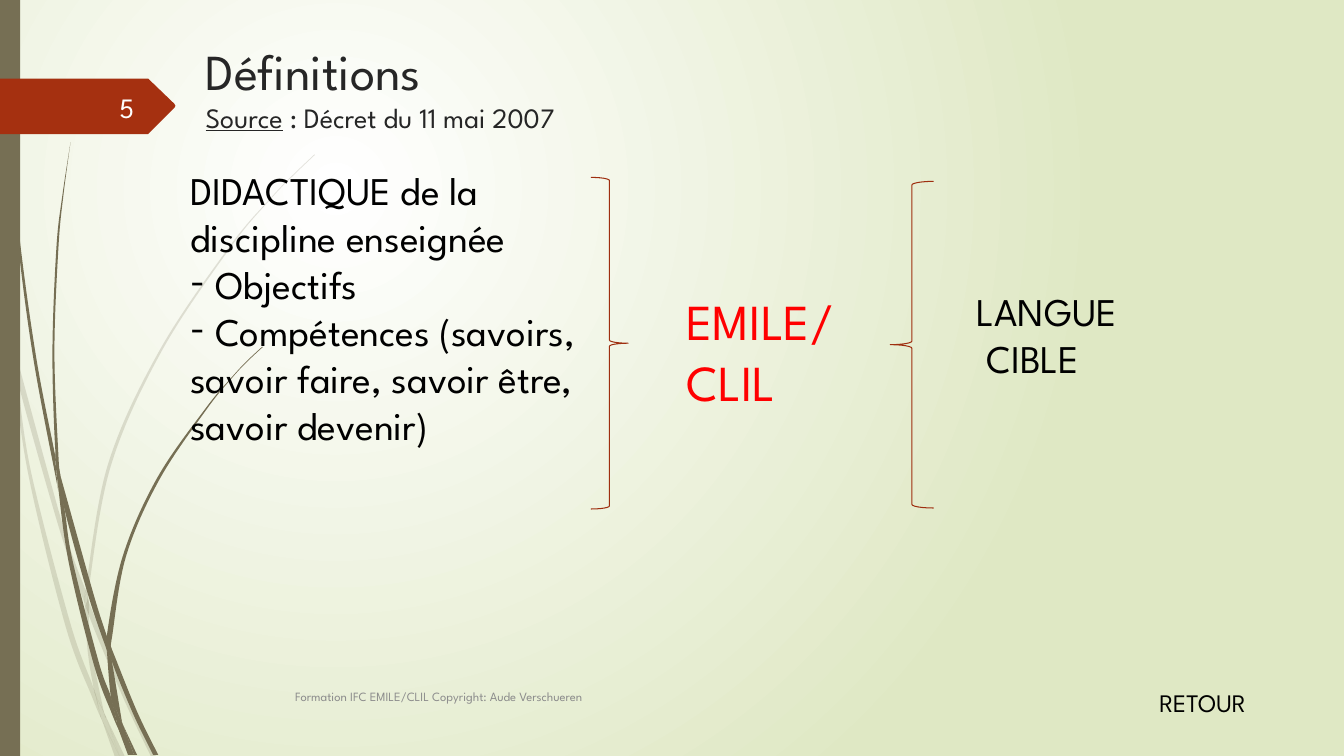
from lxml import etree
from pptx import Presentation
from pptx import util as u
from pptx.dml.color import RGBColor
from pptx.enum import shapes, text
from pptx.oxml.ns import qn

PX = 9144  # 100 px to the inch
FONT = "League Spartan"
WHITE = RGBColor(0xFF, 0xFF, 0xFF)
PALE_GREEN = RGBColor(0xDF, 0xE8, 0xC4)
OLIVE = RGBColor(0x76, 0x6F, 0x54)
RUST = RGBColor(0xA5, 0x30, 0x10)
DARK_RUST = RGBColor(0x9E, 0x2E, 0x0F)
CHARCOAL = RGBColor(0x26, 0x26, 0x26)
BLACK = RGBColor(0, 0, 0)
RED = RGBColor(0xFF, 0, 0)
GRAY = RGBColor(0x8C, 0x8C, 0x8C)
OFF_WHITE = RGBColor(0xFE, 0xFF, 0xFF)

# Each blade of grass is its two edges, both from top to bottom.
PALE_BLADES = [
    ([(0, 282), (9, 322), (11, 350)], [(0, 299), (10, 344), (11, 350)]),
    ([(14, 345), (62, 520), (85, 586)], [(14, 345), (17, 376), (58, 522), (84, 599)]),
    ([(88, 596), (92, 607), (127, 692), (155, 751)],
     [(88, 596), (88, 610), (123, 694), (150, 751)]),
    ([(105, 711), (124, 751)], [(105, 711), (119, 751)]),
    ([(11, 350), (17, 376), (31, 469), (70, 619), (93, 683), (99, 707), (101, 714)],
     [(11, 350), (28, 470), (65, 621), (92, 693), (101, 714)]),
    ([(84, 599), (88, 608), (88, 610), (91, 646), (103, 706), (105, 711)],
     [(84, 599), (87, 646), (93, 683), (96, 692), (105, 711)]),
    ([(312, 153), (289, 175), (268, 197), (228, 244), (158, 348), (107, 461),
      (85, 584), (85, 586), (88, 596)],
     [(312, 154), (290, 175), (268, 198), (229, 245), (160, 349), (110, 462),
      (88, 584), (88, 596)]),
    ([(101, 714), (119, 751)], [(101, 714), (114, 751)]),
    ([(85, 586), (88, 596), (88, 610)], [(85, 586), (84, 599), (88, 608), (88, 610)]),
    ([(93, 683), (96, 692), (105, 711), (119, 751)],
     [(93, 683), (99, 707), (101, 714), (119, 751)]),
]
DARK_BLADES = [
    ([(3, 0), (4, 48), (7, 110), (17, 233), (33, 355), (56, 477), (57, 481)],
     [(4, 0), (5, 48), (8, 109), (19, 232), (36, 355), (55, 453), (55, 457), (57, 481)]),
    ([(60, 472), (93, 590), (106, 631), (106, 633), (106, 645)],
     [(60, 472), (64, 505), (88, 592), (106, 645)]),
    ([(110, 641), (113, 649), (136, 706), (157, 749)],
     [(110, 641), (111, 656), (132, 708), (152, 749)]),
    ([(57, 477), (64, 505), (72, 556), (98, 657), (110, 691), (116, 717), (117, 722)],
     [(57, 477), (68, 557), (93, 659), (111, 708), (117, 722)]),
    ([(70, 141), (62, 193), (56, 245), (52, 349), (55, 449), (60, 472)],
     [(70, 141), (63, 193), (58, 245), (54, 349), (58, 453), (60, 472)]),
    ([(122, 719), (136, 749)], [(122, 719), (133, 749)]),
    ([(55, 449), (60, 472), (64, 505)], [(55, 449), (55, 453), (57, 477), (64, 505)]),
    ([(260, 344), (245, 358), (231, 373), (204, 405), (156, 474), (122, 551),
      (106, 631), (110, 641)],
     [(261, 344), (245, 359), (231, 374), (205, 406), (158, 476), (125, 552),
      (111, 633), (110, 641)]),
    ([(117, 722), (131, 749)], [(117, 722), (127, 749)]),
    ([(106, 645), (109, 651), (111, 656), (121, 716), (122, 719)],
     [(106, 645), (110, 691), (116, 706), (122, 719)]),
    ([(106, 631), (110, 641), (111, 656)], [(106, 631), (106, 645), (109, 651), (111, 656)]),
    ([(110, 691), (116, 706), (122, 719), (133, 749)],
     [(110, 691), (116, 717), (117, 722), (130, 749)]),
]


def curve_through(points):
    """Return the Bezier points, three a segment, that follow the first point."""
    padded = [points[0], *points, points[-1]]
    curve = []
    for a, b, c, d in zip(padded, padded[1:], padded[2:], padded[3:]):
        curve += [tuple(q + (r - p) / 6 for p, q, r in zip(a, b, c)),
                  tuple(r - (v - q) / 6 for q, r, v in zip(b, c, d)), c]
    return curve


def add_outline(parent, x, y, points, color):
    emu = [(round((x + px) * PX), round((y + py) * PX)) for px, py in points]
    builder = parent.shapes.build_freeform(*emu[0])
    builder.add_line_segments(emu[1:], close=True)
    sp = builder.convert_to_shape()
    sp.shadow.inherit = False
    sp.fill.solid()
    sp.fill.fore_color.rgb = color
    sp.line.fill.background()
    return sp


def add_blade(group, x, y, near, far, alpha):
    points = [near[0]] + curve_through(near)
    if near[-1] != far[-1]:
        points += curve_through([near[-1], far[-1]])
    points += curve_through(far[::-1])
    sp = add_outline(group, x, y, points, OLIVE)
    lines = sp._element.findall(".//" + qn("a:lnTo"))
    for first, second, third in zip(lines[::3], lines[1::3], lines[2::3]):
        bezier = etree.Element(qn("a:cubicBezTo"))
        first.addprevious(bezier)
        for line in (first, second, third):
            bezier.append(line[0])
            line.getparent().remove(line)
    if alpha:
        clr = sp._element.spPr.find(".//" + qn("a:srgbClr"))
        etree.SubElement(clr, qn("a:alpha"), val=str(alpha * 1000))


def add_background(s):
    fill = s.background.fill
    fill.gradient()
    for stop, color in zip(fill.gradient_stops, (WHITE, PALE_GREEN)):
        stop.color.rgb = color
    lin = s._element.find(".//" + qn("a:lin"))
    circle = etree.Element(qn("a:path"), {"path": "circle"})
    etree.SubElement(circle, qn("a:fillToRect"),
                     l="50000", t="50000", r="100000", b="100000")
    lin.getparent().replace(lin, circle)


def add_grass(s, x, y, h):
    for blades, alpha in ((PALE_BLADES, 20), (DARK_BLADES, None)):
        group = s.shapes.add_group_shape()
        for near, far in blades:
            add_blade(group, x, y, near, far, alpha)
    sp = s.shapes.add_shape(shapes.MSO_SHAPE.RECTANGLE, x * PX, y * PX, 20 * PX, h * PX)
    sp.shadow.inherit = False
    sp.fill.solid()
    sp.fill.fore_color.rgb = OLIVE
    sp.line.fill.background()


def style_run(r, size, color):
    r.font.name = FONT
    r.font.size = u.Pt(size)
    r.font.color.rgb = color


def add_text(s, x, y, w, h, lines, size, color):
    """Add a text box with one paragraph for each line."""
    sp = s.shapes.add_textbox(x * PX, y * PX, w * PX, h * PX)
    tf = sp.text_frame
    tf.word_wrap = True
    for i, line in enumerate(lines):
        p = tf.add_paragraph() if i else tf.paragraphs[0]
        p.text = line
        for r in p.runs:
            style_run(r, size, color)
    return tf


def add_page_tag(s, x, y, w, h):
    add_outline(s, x, y, [(0, 0), (w - 27, 0), (w - 1, h // 2 - 2), (w, h // 2),
                          (w - 1, h // 2 + 2), (w - 27, h), (0, h)], RUST)
    tf = add_text(s, x + 58, y + 8, 85, 40, ["5"], 20, OFF_WHITE)
    tf.vertical_anchor = text.MSO_ANCHOR.MIDDLE
    tf.paragraphs[0].alignment = text.PP_ALIGN.RIGHT


def add_title(s, x, y, w, h):
    tf = add_text(s, x, y, w, h, ["Définitions"], 36, CHARCOAL)
    p = tf.paragraphs[0]
    p.add_line_break()
    for words, underline in (("Source", True), (" : Décret du 11 mai 2007", False)):
        r = p.add_run()
        r.text = words
        style_run(r, 20, CHARCOAL)
        r.font.underline = underline


def add_brace(s, kind, x, y, w, h):
    sp = s.shapes.add_shape(kind, x * PX, y * PX, w * PX, h * PX)
    sp.shadow.inherit = False
    sp.fill.background()
    sp.line.color.rgb = DARK_RUST
    sp.line.width = u.Pt(0.75)


def add_diagram(s, x, y):
    """Place the two fields and the braces that join them in EMILE/CLIL."""
    subject = ["DIDACTIQUE de la discipline enseignée", " Objectifs",
               " Compétences (savoirs, savoir faire, savoir être, savoir devenir)"]
    tf = add_text(s, x, y, 433, 340, subject, 28, BLACK)
    for p in tf.paragraphs[1:]:
        pPr = p._p.get_or_add_pPr()
        pPr.set("marL", "0")
        pPr.set("indent", "0")
        etree.SubElement(pPr, qn("a:buFont"), typeface=FONT)
        etree.SubElement(pPr, qn("a:buChar"), char="-")
    add_text(s, x + 780, y + 120, 177, 104, ["LANGUE", " CIBLE"], 28, BLACK)
    add_brace(s, shapes.MSO_SHAPE.LEFT_BRACE, x + 704, y + 20, 43, 324)
    add_brace(s, shapes.MSO_SHAPE.RIGHT_BRACE, x + 407, y + 16, 37, 329)
    add_text(s, x + 492, y + 123, 177, 131, ["EMILE/", "CLIL"], 36, RED)


def add_footer(s, x, y):
    tf = add_text(s, x, y, 833, 40,
                  ["Formation IFC EMILE/CLIL Copyright: Aude Verschueren"], 9, GRAY)
    tf.vertical_anchor = text.MSO_ANCHOR.MIDDLE
    add_text(s, x + 857, y + 6, 113, 40, ["RETOUR"], 18, BLACK)


def main():
    prs = Presentation()
    prs.slide_width, prs.slide_height = 1333 * PX, 750 * PX
    s = prs.slides.add_slide(prs.slide_layouts[6])
    add_background(s)
    add_grass(s, 0, 0, 750)
    add_page_tag(s, 0, 78, 174, 55)
    add_title(s, 194, 35, 975, 135)
    add_diagram(s, 179, 160)
    add_footer(s, 283, 671)
    prs.save("out.pptx")


if __name__ == "__main__":
    main()
